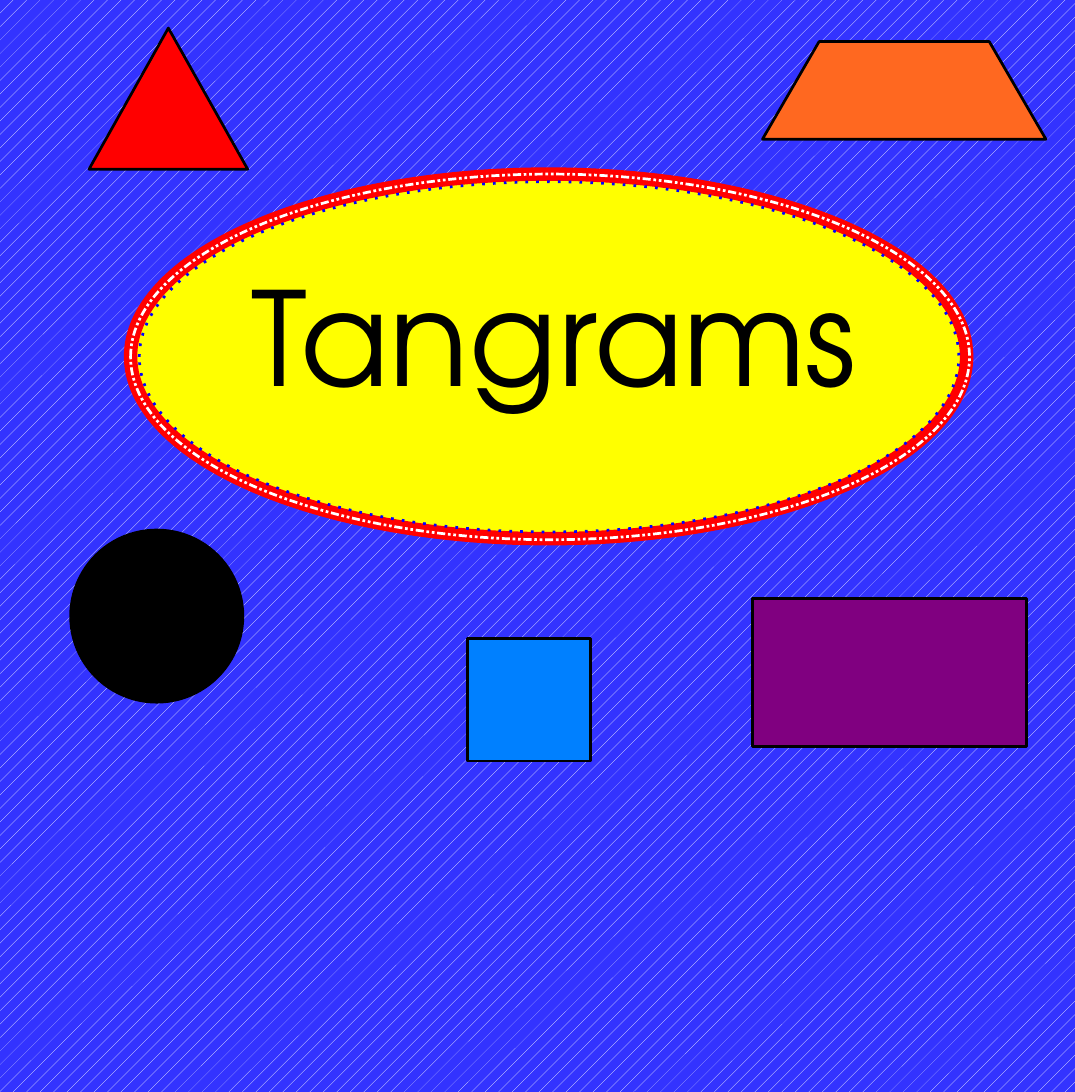
import pptx
import pptx.dml.color
import pptx.enum.dml
import pptx.enum.shapes
import pptx.enum.text
import pptx.oxml
import pptx.oxml.ns
import pptx.util
from lxml import etree

Inches = pptx.util.Inches
Pt = pptx.util.Pt
RGB = pptx.dml.color.RGBColor.from_string
qn = pptx.oxml.ns.qn
SHAPE = pptx.enum.shapes.MSO_SHAPE

COLORS = {
    "black": "000000", "white": "FFFFFF", "red": "FF0000", "yellow": "FFFF00",
    "blue": "0000FF", "sky": "0080FF", "purple": "800080", "orange": "FF6820",
    "background": "3333FF",
}

prs = pptx.Presentation()
prs.slide_width = Inches(11.11)
prs.slide_height = Inches(11.29)
s = prs.slides.add_slide(prs.slide_layouts[5])

fill = s.background.fill
fill.patterned()
fill.pattern = pptx.enum.dml.MSO_PATTERN.PERCENT_5
fill.fore_color.rgb = RGB(COLORS["white"])
fill.back_color.rgb = RGB(COLORS["background"])


def add_figure(kind, box, fill_color, line_color, line_width=2, dash=None):
    """Add a preset shape; a fill_color of None leaves only the outline."""
    sp = s.shapes.add_shape(kind, *map(Inches, box))
    sp.shadow.inherit = False
    if fill_color:
        sp.fill.solid()
        sp.fill.fore_color.rgb = RGB(COLORS[fill_color])
    else:
        sp.fill.background()
    sp.line.color.rgb = RGB(COLORS[line_color])
    sp.line.width = Pt(line_width)
    if dash:
        ln = sp.element.spPr.find(qn("a:ln"))
        etree.SubElement(ln, qn("a:prstDash")).set("val", dash)
    return sp


# Title on its oval badge
badge = add_figure(SHAPE.OVAL, (1.35, 1.8, 8.64, 3.77), "yellow", "red", 10)
title = s.shapes.title
badge.element.addnext(title.element)
title.left, title.top = Inches(2.5), Inches(2.6)
title.width, title.height = Inches(7.58), Inches(1.73)
tf = title.text_frame
tf.text = "Tangrams"
tf.word_wrap = True
tf.auto_size = pptx.enum.text.MSO_AUTO_SIZE.NONE
tf.vertical_anchor = pptx.enum.text.MSO_ANCHOR.TOP
p = tf.paragraphs[0]
p.alignment = pptx.enum.text.PP_ALIGN.LEFT
p.font.name = "TeX Gyre Adventor"
p.font.size = Pt(97)
p.font.color.rgb = RGB(COLORS["black"])

# Dashed rings on the badge's edge
add_figure(SHAPE.OVAL, (1.35, 1.8, 8.67, 3.78), None, "white", dash="sysDashDotDot")
add_figure(SHAPE.OVAL, (1.44, 1.88, 8.47, 3.62), None, "blue", dash="dot")

# Pieces around the badge
add_figure(SHAPE.OVAL, (0.73, 5.48, 1.78, 1.78), "black", "black")
add_figure(SHAPE.RECTANGLE, (4.83, 6.6, 1.27, 1.27), "sky", "black")
add_figure(SHAPE.RECTANGLE, (7.78, 6.19, 2.83, 1.53), "purple", "black")
trapezoid = add_figure(SHAPE.TRAPEZOID, (7.88, 0.43, 2.93, 1.01), "orange", "black")
trapezoid.adjustments[0] = 0.58
add_figure(SHAPE.ISOSCELES_TRIANGLE, (0.92, 0.29, 1.64, 1.46), "red", "black")

prs.save("out.pptx")
